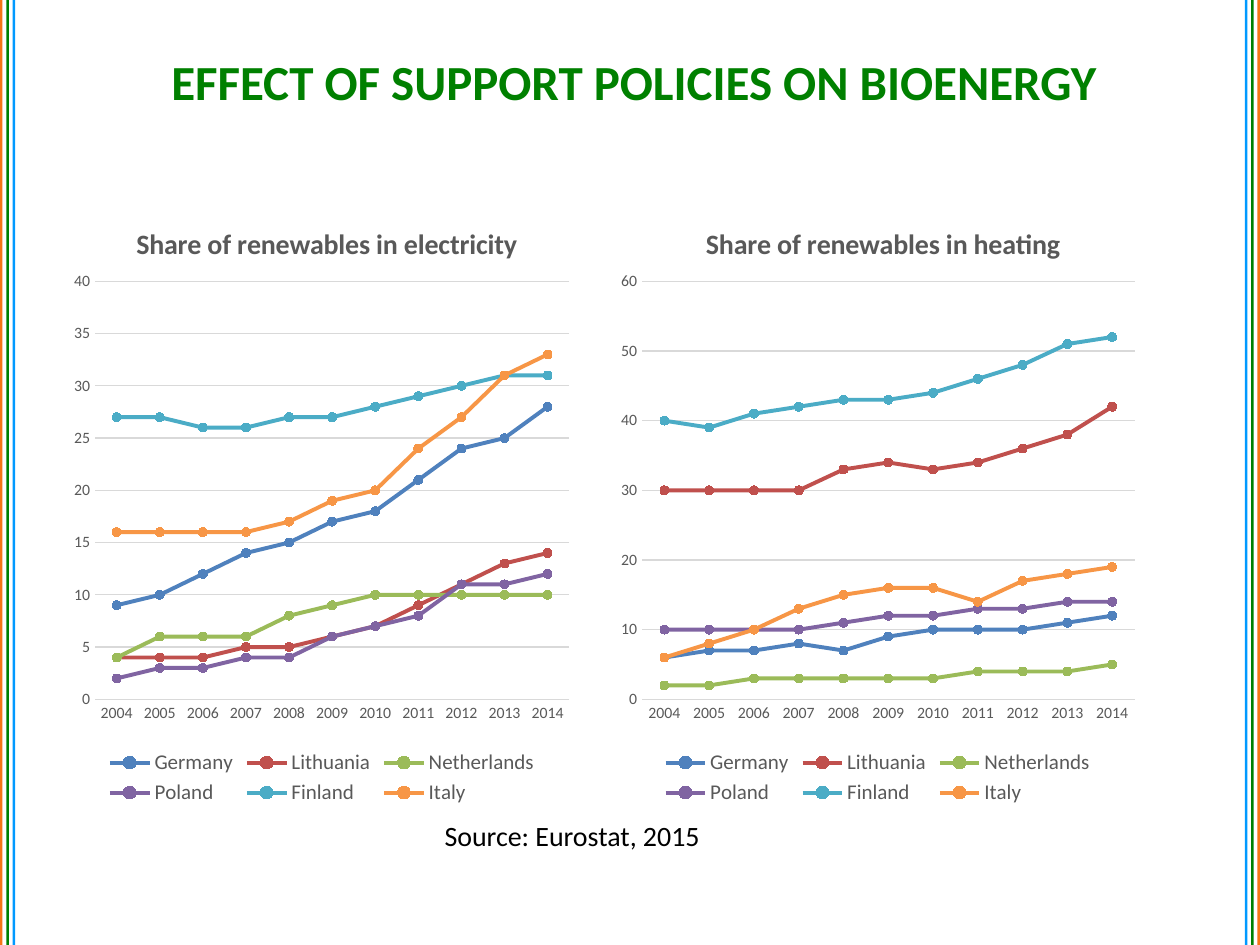
from dataclasses import dataclass

from pptx import Presentation
from pptx.chart.data import CategoryChartData
from pptx.dml.color import RGBColor
from pptx.enum.chart import XL_CHART_TYPE, XL_LEGEND_POSITION, XL_MARKER_STYLE, XL_TICK_MARK
from pptx.enum.shapes import MSO_SHAPE
from pptx.enum.text import MSO_ANCHOR, PP_ALIGN
from pptx.oxml import parse_xml
from pptx.oxml.ns import nsdecls
from pptx.util import Inches, Pt


@dataclass(frozen=True)
class Theme:
    font: str = "Calibri"
    heading: str = "008000"
    body: str = "000000"
    muted: str = "595959"
    grid: str = "D9D9D9"
    stripes: tuple = ("F67616", "008000", "0099FF")
    countries: tuple = ("4F81BD", "C0504D", "9BBB59", "8064A2", "4BACC6", "F79646")
    heading_size: int = 28
    text_size: int = 16
    legend_size: int = 12
    axis_size: int = 9


THEME = Theme()
WIDTH, HEIGHT = 10, 7.5
STRIPE_WIDTH, STRIPE_STEP = 0.02, 0.05
CHART_TOP, CHART_HEIGHT = 1.55, 4.88
PLOT_SHARES = {"x": 0.06, "y": 0.14, "w": 0.92, "h": 0.68}

HEADING = "EFFECT OF SUPPORT POLICIES ON BIOENERGY"
SOURCE = "Source: Eurostat, 2015"
YEARS = [str(year) for year in range(2004, 2015)]
PANELS = [
    {
        "title": "Share of renewables in electricity",
        "left": 0.51, "width": 4.09, "title_x": 0.13, "top_value": 40, "step": 5,
        "shares": {
            "Germany": (9, 10, 12, 14, 15, 17, 18, 21, 24, 25, 28),
            "Lithuania": (4, 4, 4, 5, 5, 6, 7, 9, 11, 13, 14),
            "Netherlands": (4, 6, 6, 6, 8, 9, 10, 10, 10, 10, 10),
            "Poland": (2, 3, 3, 4, 4, 6, 7, 8, 11, 11, 12),
            "Finland": (27, 27, 26, 26, 27, 27, 28, 29, 30, 31, 31),
            "Italy": (16, 16, 16, 16, 17, 19, 20, 24, 27, 31, 33),
        },
    },
    {
        "title": "Share of renewables in heating",
        "left": 4.84, "width": 4.25, "title_x": 0.17, "top_value": 60, "step": 10,
        "shares": {
            "Germany": (6, 7, 7, 8, 7, 9, 10, 10, 10, 11, 12),
            "Lithuania": (30, 30, 30, 30, 33, 34, 33, 34, 36, 38, 42),
            "Netherlands": (2, 2, 3, 3, 3, 3, 3, 4, 4, 4, 5),
            "Poland": (10, 10, 10, 10, 11, 12, 12, 13, 13, 14, 14),
            "Finland": (40, 39, 41, 42, 43, 43, 44, 46, 48, 51, 52),
            "Italy": (6, 8, 10, 13, 15, 16, 16, 14, 17, 18, 19),
        },
    },
]


def rgb(color):
    return RGBColor.from_string(color)


def style_font(font, size, color, bold=False):
    font.name, font.size, font.bold = THEME.font, Pt(size), bold
    font.color.rgb = rgb(color)


def style_line(line, color, width):
    line.color.rgb = rgb(color)
    line.width = Pt(width)


def place(element, index, shares, target=""):
    for old in element.findall("{*}layout"):
        element.remove(old)
    modes = "".join(f'<c:{key}Mode val="edge"/>' for key in "xy")
    sizes = "".join(f'<c:{key} val="{value}"/>' for key, value in shares.items())
    element.insert(index, parse_xml(
        f'<c:layout {nsdecls("c")}><c:manualLayout>{target}{modes}{sizes}</c:manualLayout></c:layout>'))


def add_stripes(slide):
    for i, color in enumerate(THEME.stripes):
        offset = i * STRIPE_STEP
        for left in (offset, WIDTH - STRIPE_WIDTH - offset):
            stripe = slide.shapes.add_shape(
                MSO_SHAPE.RECTANGLE, Inches(left), 0, Inches(STRIPE_WIDTH), Inches(HEIGHT))
            stripe.shadow.inherit = False
            stripe.fill.solid()
            stripe.fill.fore_color.rgb = rgb(color)
            stripe.line.fill.background()


def add_panel(slide, panel):
    data = CategoryChartData()
    data.categories = YEARS
    for country, values in panel["shares"].items():
        data.add_series(country, values)
    chart = slide.shapes.add_chart(
        XL_CHART_TYPE.LINE_MARKERS, Inches(panel["left"]), Inches(CHART_TOP),
        Inches(panel["width"]), Inches(CHART_HEIGHT), data).chart
    style_font(chart.font, THEME.axis_size, THEME.muted)

    chart.has_title = True
    caption = chart.chart_title.text_frame
    caption.text = panel["title"]
    style_font(caption.paragraphs[0].font, THEME.text_size, THEME.muted, bold=True)
    chart.chart_title.include_in_layout = False
    root = chart.element if hasattr(chart, "element") else chart._chartSpace
    place(root.xpath("c:chart/c:title")[0], 1, {"x": panel["title_x"], "y": 0.04})
    place(root.xpath("c:chart/c:plotArea")[0], 0, PLOT_SHARES, '<c:layoutTarget val="inner"/>')

    chart.has_legend = True
    chart.legend.position = XL_LEGEND_POSITION.BOTTOM
    chart.legend.include_in_layout = False
    style_font(chart.legend.font, THEME.legend_size, THEME.muted)

    years, shares = chart.category_axis, chart.value_axis
    for axis in (years, shares):
        axis.major_tick_mark = axis.minor_tick_mark = XL_TICK_MARK.NONE
        style_font(axis.tick_labels.font, THEME.axis_size, THEME.muted)
    style_line(years.format.line, THEME.grid, 0.75)
    shares.format.line.fill.background()
    shares.minimum_scale, shares.maximum_scale = 0, panel["top_value"]
    shares.major_unit = panel["step"]
    shares.has_major_gridlines = True
    style_line(shares.major_gridlines.format.line, THEME.grid, 0.75)

    plot = chart.plots[0]
    plot.vary_by_categories = False
    for country, color in zip(plot.series, THEME.countries):
        country.smooth = False
        style_line(country.format.line, color, 2.25)
        country.marker.style, country.marker.size = XL_MARKER_STYLE.CIRCLE, 5
        country.marker.format.fill.solid()
        country.marker.format.fill.fore_color.rgb = rgb(color)
        style_line(country.marker.format.line, color, 0.75)


def main():
    """Build the bioenergy support policies slide."""
    deck = Presentation()
    deck.slide_width, deck.slide_height = Inches(WIDTH), Inches(HEIGHT)
    slide = deck.slides.add_slide(deck.slide_layouts[5])
    add_stripes(slide)

    heading = slide.shapes.title
    heading.left, heading.top = Inches(0.78), Inches(0.29)
    heading.width, heading.height = Inches(8.5), Inches(0.7)
    heading.text_frame.text = HEADING
    heading.text_frame.vertical_anchor = MSO_ANCHOR.MIDDLE
    heading.text_frame.paragraphs[0].alignment = PP_ALIGN.CENTER
    style_font(heading.text_frame.paragraphs[0].font, THEME.heading_size, THEME.heading, bold=True)

    for panel in PANELS:
        add_panel(slide, panel)

    source = slide.shapes.add_textbox(Inches(3.43), Inches(6.45), Inches(2.83), Inches(0.37))
    source.text_frame.word_wrap = True
    source.text_frame.text = SOURCE
    style_font(source.text_frame.paragraphs[0].font, THEME.text_size, THEME.body)
    deck.save("out.pptx")


if __name__ == "__main__":
    main()
